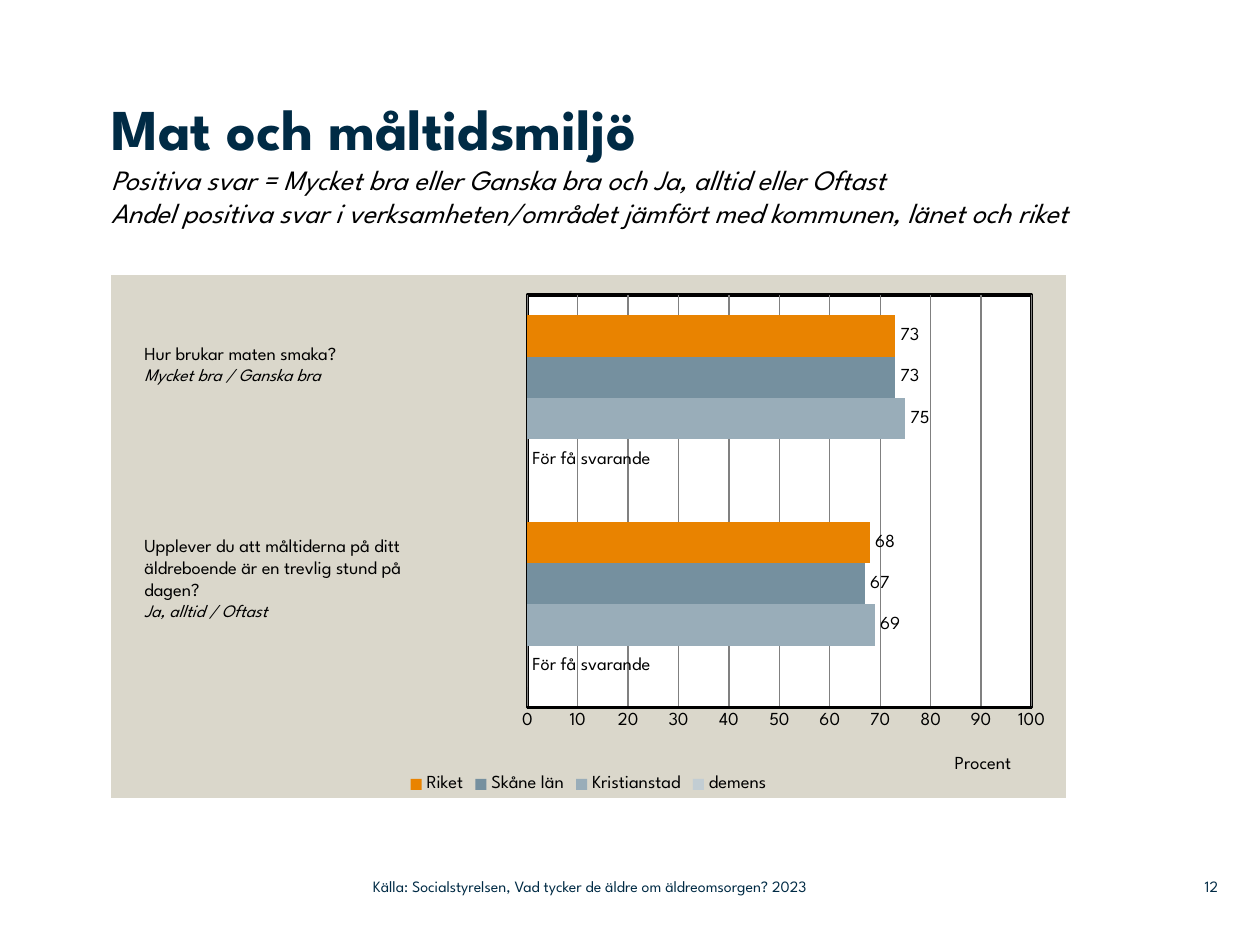
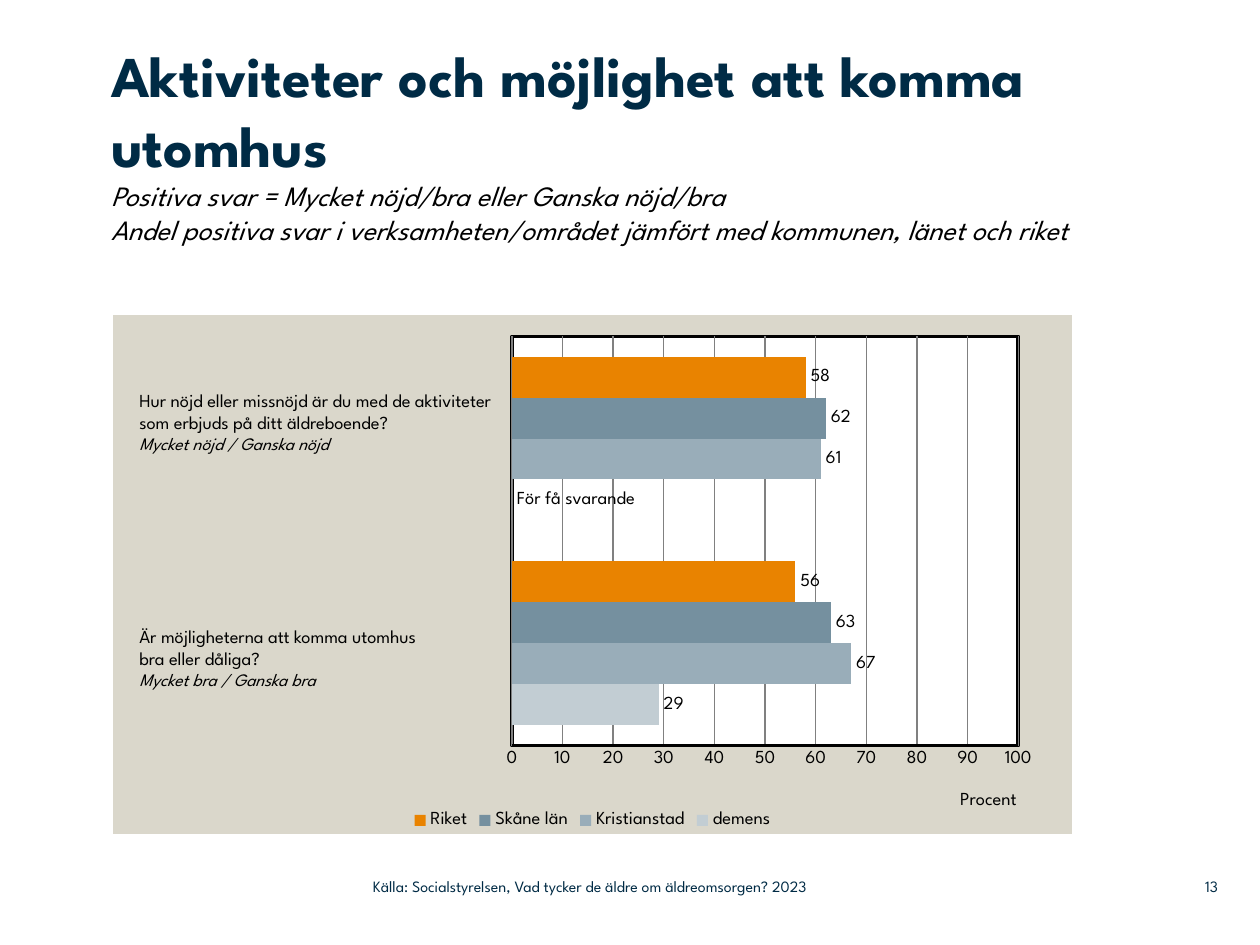
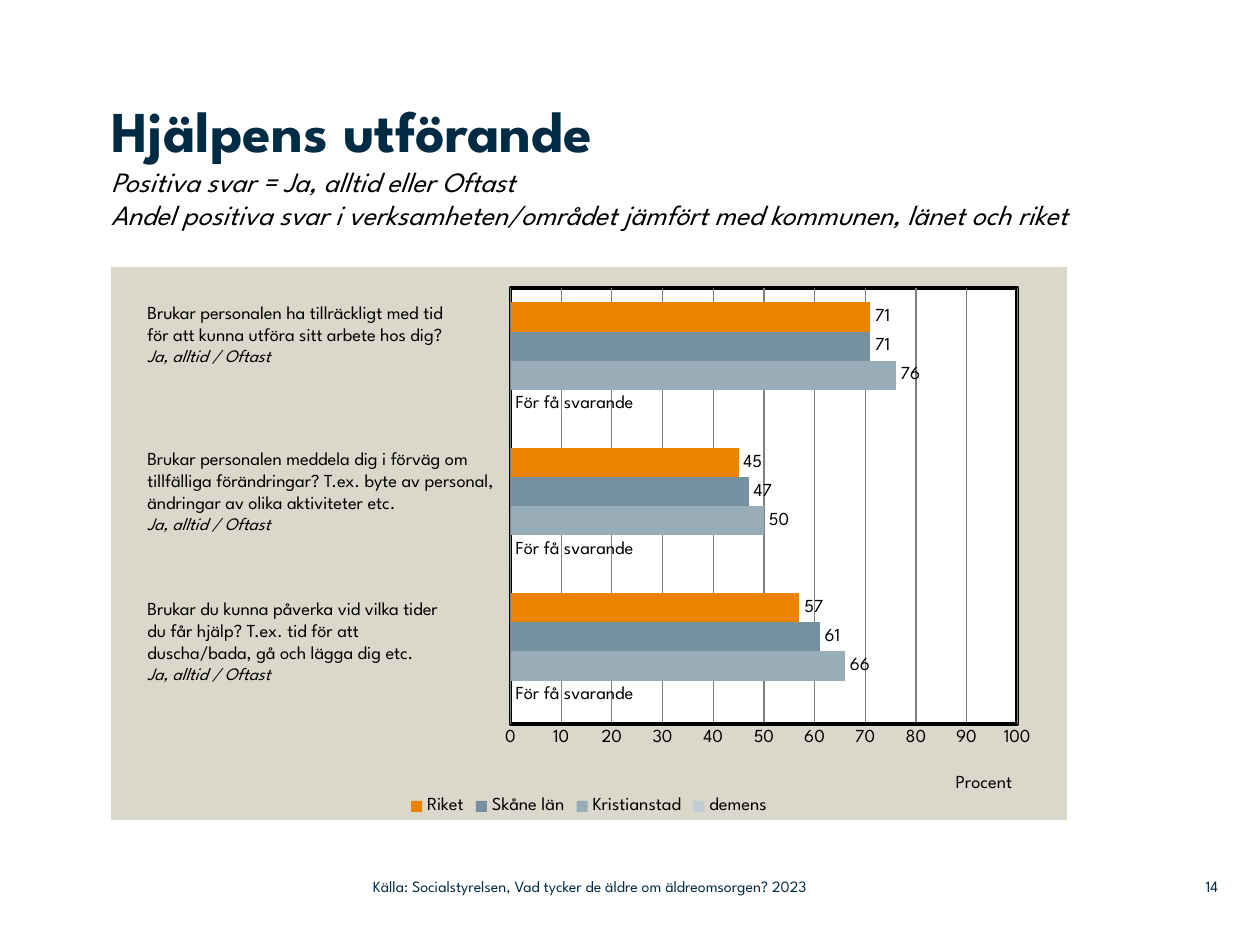
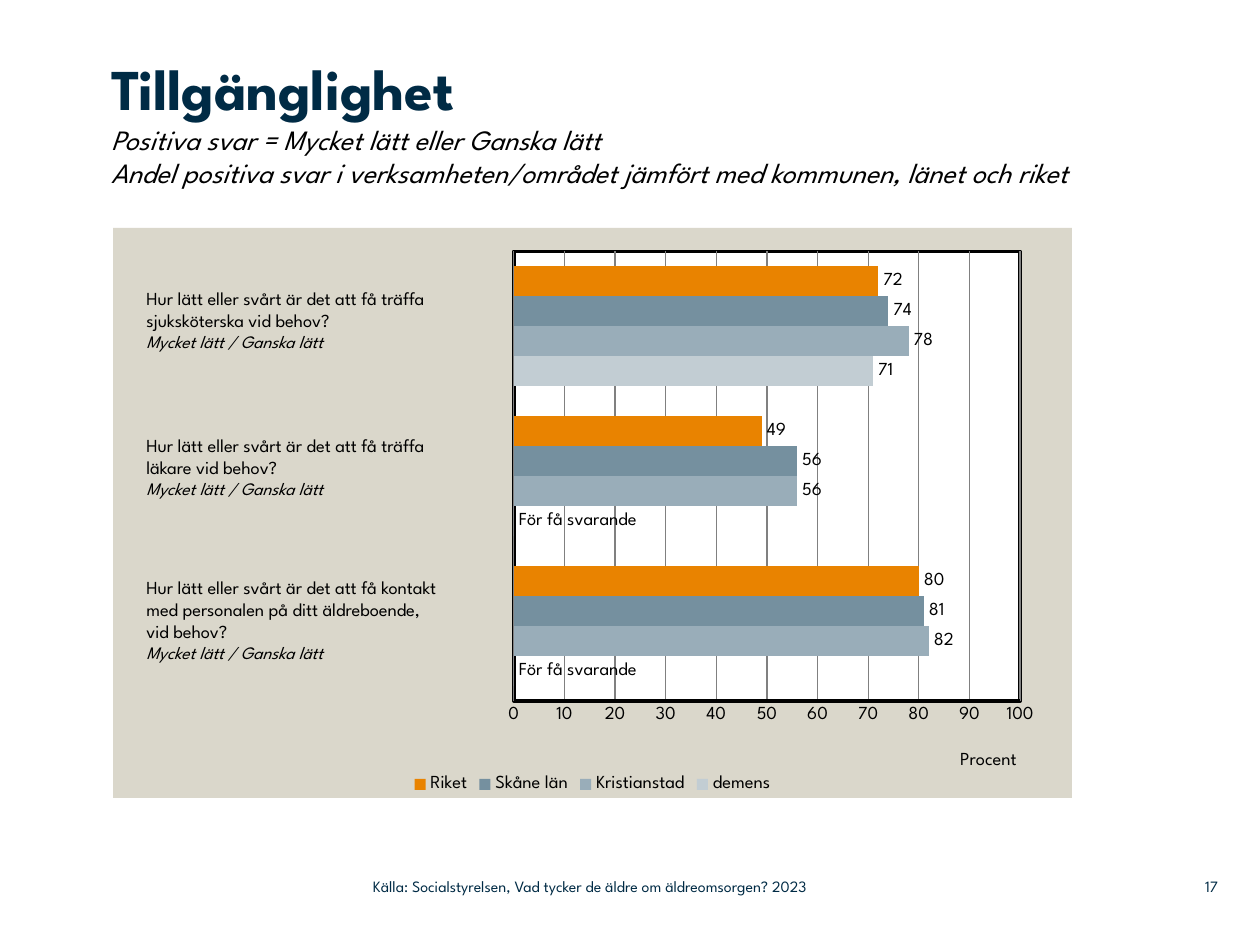
from lxml import etree
from pptx import Presentation
from pptx.chart.data import CategoryChartData
from pptx.dml.color import RGBColor
from pptx.enum.chart import XL_CHART_TYPE, XL_LABEL_POSITION, XL_LEGEND_POSITION, XL_TICK_MARK
from pptx.enum.text import MSO_ANCHOR, MSO_AUTO_SIZE, PP_ALIGN
from pptx.oxml import parse_xml
from pptx.oxml.ns import nsdecls, qn
from pptx.util import Pt

EMU_PER_PX = 914400 / 126
FONT = "League Spartan"
NAVY = RGBColor(0x00, 0x2B, 0x45)
BLACK = RGBColor(0x00, 0x00, 0x00)
WHITE = RGBColor(0xFF, 0xFF, 0xFF)
SAND = RGBColor(0xDA, 0xD7, 0xCB)
GRID_GREY = RGBColor(0x80, 0x80, 0x80)
# Groups from the top bar to the bottom bar of each question
GROUP_COLORS = {
    "Riket": RGBColor(0xE9, 0x83, 0x00),
    "Skåne län": RGBColor(0x75, 0x90, 0x9F),
    "Kristianstad": RGBColor(0x99, 0xAD, 0xB9),
    "demens": RGBColor(0xC2, 0xCD, 0xD3),
}
TOO_FEW = "För få svarande"
COMPARISON = "Andel positiva svar i verksamheten/området jämfört med kommunen, länet och riket"
SOURCE = "Källa: Socialstyrelsen, Vad tycker de äldre om äldreomsorgen? 2023"

# Boxes are left, top, width, height in px. Each question has its box, its
# paragraphs (the last one names the positive answers) and a share per group,
# where 0 means too few respondents.
PAGES = [
    {
        "number": 12,
        "heading": "Mat och måltidsmiljö",
        "positive": "Positiva svar = Mycket bra eller Ganska bra och Ja, alltid eller Oftast",
        "title_box": (111, 93, 1061, 181),
        "chart_box": (111, 275, 955, 523),
        "plot": (0.436, 0.038, 0.528),
        "questions": [
            ((132, 336, 349, 79),
             ["Hur brukar maten smaka?", "Mycket bra / Ganska bra"],
             (73, 73, 75, 0)),
            ((132, 528, 349, 123),
             ["Upplever du att måltiderna på ditt äldreboende är en trevlig stund på",
              "dagen?", "Ja, alltid / Oftast"],
             (68, 67, 69, 0)),
        ],
    },
    {
        "number": 13,
        "heading": "Aktiviteter och möjlighet att komma utomhus",
        "positive": "Positiva svar = Mycket nöjd/bra eller Ganska nöjd/bra",
        "title_box": (111, 40, 983, 238),
        "chart_box": (113, 315, 959, 519),
        "plot": (0.416, 0.041, 0.528),
        "questions": [
            ((127, 383, 378, 123),
             ["Hur nöjd eller missnöjd är du med de aktiviteter som erbjuds på ditt äldreboende?",
              "Mycket nöjd / Ganska nöjd"],
             (58, 62, 61, 0)),
            ((127, 619, 379, 102),
             ["Är möjligheterna att komma utomhus", "bra eller dåliga?",
              "Mycket bra / Ganska bra"],
             (56, 63, 67, 29)),
        ],
    },
    {
        "number": 14,
        "heading": "Hjälpens utförande",
        "positive": "Positiva svar = Ja, alltid eller Oftast",
        "title_box": (111, 95, 982, 152),
        "chart_box": (111, 267, 956, 553),
        "plot": (0.418, 0.038, 0.53),
        "questions": [
            ((135, 295, 374, 102),
             ["Brukar personalen ha tillräckligt med tid",
              "för att kunna utföra sitt arbete hos dig?", "Ja, alltid / Oftast"],
             (71, 71, 76, 0)),
            ((135, 441, 377, 123),
             ["Brukar personalen meddela dig i förväg om tillfälliga förändringar? "
              "T.ex. byte av personal, ändringar av olika aktiviteter etc.",
              "Ja, alltid / Oftast"],
             (45, 47, 50, 0)),
            ((135, 591, 374, 102),
             ["Brukar du kunna påverka vid vilka tider", "du får hjälp? T.ex. tid för att",
              "duscha/bada, gå och lägga dig etc.", "Ja, alltid / Oftast"],
             (57, 61, 66, 0)),
        ],
    },
    {
        "number": 17,
        "heading": "Tillgänglighet",
        "positive": "Positiva svar = Mycket lätt eller Ganska lätt",
        "title_box": (111, 53, 979, 175),
        "chart_box": (113, 228, 959, 570),
        "plot": (0.418, 0.041, 0.528),
        "questions": [
            ((134, 281, 377, 102),
             ["Hur lätt eller svårt är det att få träffa sjuksköterska vid behov?",
              "Mycket lätt / Ganska lätt"],
             (72, 74, 78, 71)),
            ((134, 428, 369, 102),
             ["Hur lätt eller svårt är det att få träffa", "läkare vid behov?",
              "Mycket lätt / Ganska lätt"],
             (49, 56, 56, 0)),
            ((134, 570, 379, 123),
             ["Hur lätt eller svårt är det att få kontakt",
              "med personalen på ditt äldreboende,", "vid behov?",
              "Mycket lätt / Ganska lätt"],
             (80, 81, 82, 0)),
        ],
    },
]


def px(*lengths):
    return [round(length * EMU_PER_PX) for length in lengths]


def style(font, size, color=BLACK, bold=False, italic=False):
    font.name, font.size, font.bold, font.italic = FONT, Pt(size), bold, italic
    font.color.rgb = color


prs = Presentation()
prs.slide_width, prs.slide_height = px(1260, 945)
title_only = prs.slide_layouts[5]

for page in PAGES:
    slide = prs.slides.add_slide(title_only)

    # Heading and the two lines that explain the measure
    title = slide.shapes.title
    title.left, title.top, title.width, title.height = px(*page["title_box"])
    frame = title.text_frame
    frame.margin_left = frame.margin_top = frame.margin_right = frame.margin_bottom = 0
    frame.vertical_anchor = MSO_ANCHOR.TOP
    frame.auto_size = MSO_AUTO_SIZE.NONE
    paragraph = frame.paragraphs[0]
    paragraph.alignment = PP_ALIGN.LEFT
    heading = paragraph.add_run()
    heading.text = page["heading"]
    style(heading.font, 33, NAVY, bold=True)
    for line in (page["positive"], COMPARISON):
        paragraph.add_line_break()
        explanation = paragraph.add_run()
        explanation.text = line
        style(explanation.font, 16, italic=True)

    # Bars run from the bottom up, so questions and groups are reversed
    shares = [values for _, _, values in reversed(page["questions"])]
    data = CategoryChartData()
    data.categories = [str(n + 1) for n in range(len(shares))]
    for group, name in reversed(list(enumerate(GROUP_COLORS))):
        data.add_series(name, [values[group] for values in shares])
    chart = slide.shapes.add_chart(
        XL_CHART_TYPE.BAR_CLUSTERED, *px(*page["chart_box"]), data).chart
    style(chart.font, 10.5)
    chart.has_title = False
    chart.has_legend = True
    chart.legend.position = XL_LEGEND_POSITION.BOTTOM
    chart.legend.include_in_layout = False
    style(chart.legend.font, 10.5)
    chart.category_axis.visible = False

    percent_axis = chart.value_axis
    percent_axis.minimum_scale, percent_axis.maximum_scale = 0, 100
    percent_axis.major_unit = 10
    percent_axis.major_tick_mark = percent_axis.minor_tick_mark = XL_TICK_MARK.NONE
    percent_axis.format.line.color.rgb = BLACK
    percent_axis.format.line.width = Pt(2)
    percent_axis.has_major_gridlines = True
    percent_axis.major_gridlines.format.line.color.rgb = GRID_GREY
    percent_axis.major_gridlines.format.line.width = Pt(0.75)
    style(percent_axis.tick_labels.font, 10.5)
    unit = percent_axis.axis_title.text_frame
    unit.text = "Procent"
    style(unit.paragraphs[0].font, 10.5)

    plot = chart.plots[0]
    plot.vary_by_categories = False
    plot.gap_width, plot.overlap = 100, 0
    for series in plot.series:
        series.format.fill.solid()
        series.format.fill.fore_color.rgb = GROUP_COLORS[series.name]
        labels = series.data_labels
        labels.show_value = True
        labels.position = XL_LABEL_POSITION.OUTSIDE_END
        style(labels.font, 10.5)
        for index, share in enumerate(series.values):
            if share == 0:
                label = series.points[index].data_label
                label.text_frame.text = TOO_FEW
                style(label.text_frame.paragraphs[0].runs[0].font, 10.5)
                label.position = XL_LABEL_POSITION.OUTSIDE_END

    # Fixed places for the plot and the axis title
    chart_space = chart.element
    plot_area = chart_space.find(".//" + qn("c:plotArea"))
    axis_title = plot_area.find(".//" + qn("c:valAx") + "/" + qn("c:title"))
    left, top, width = page["plot"]
    for parent, position, places in (
            (plot_area, 0, {"layoutTarget": "inner", "xMode": "edge", "yMode": "edge",
                            "x": left, "y": top, "w": width, "h": 0.789}),
            (axis_title, 1, {"xMode": "edge", "yMode": "edge", "x": 0.88, "y": 0.91})):
        for automatic in parent.findall(qn("c:layout")):
            parent.remove(automatic)
        layout = etree.Element(qn("c:layout"))
        manual = etree.SubElement(layout, qn("c:manualLayout"))
        for key, value in places.items():
            etree.SubElement(manual, qn("c:" + key)).set("val", str(value))
        parent.insert(position, layout)

    # Sand chart background, white plot with a black frame
    for fill, line in ((SAND, "<a:ln><a:noFill/></a:ln>"),
                       (WHITE, '<a:ln w="25400"><a:solidFill><a:srgbClr val="000000"/>'
                               "</a:solidFill></a:ln>")):
        area = parse_xml(f'<c:spPr {nsdecls("c", "a")}><a:solidFill><a:srgbClr val="{fill}"/>'
                         f"</a:solidFill>{line}</c:spPr>")
        if fill == SAND:
            chart_space.find(qn("c:chart")).addnext(area)
        else:
            plot_area.append(area)

    for box, lines, _ in page["questions"]:
        frame = slide.shapes.add_textbox(*px(*box)).text_frame
        frame.word_wrap = True
        for index, line in enumerate(lines):
            paragraph = frame.paragraphs[0] if index == 0 else frame.add_paragraph()
            paragraph.text = line
            is_answer = index == len(lines) - 1
            style(paragraph.font, 10 if is_answer else 10.5, italic=is_answer)

    for box, text, alignment in (
            ((1159, 868, 59, 37), str(page["number"]), PP_ALIGN.RIGHT),
            ((373, 868, 558, 37), SOURCE, PP_ALIGN.LEFT)):
        frame = slide.shapes.add_textbox(*px(*box)).text_frame
        frame.margin_left = frame.margin_top = frame.margin_right = frame.margin_bottom = 0
        frame.word_wrap = True
        frame.vertical_anchor = MSO_ANCHOR.MIDDLE
        paragraph = frame.paragraphs[0]
        paragraph.text = text
        paragraph.alignment = alignment
        style(paragraph.font, 9, NAVY)

prs.save("out.pptx")
